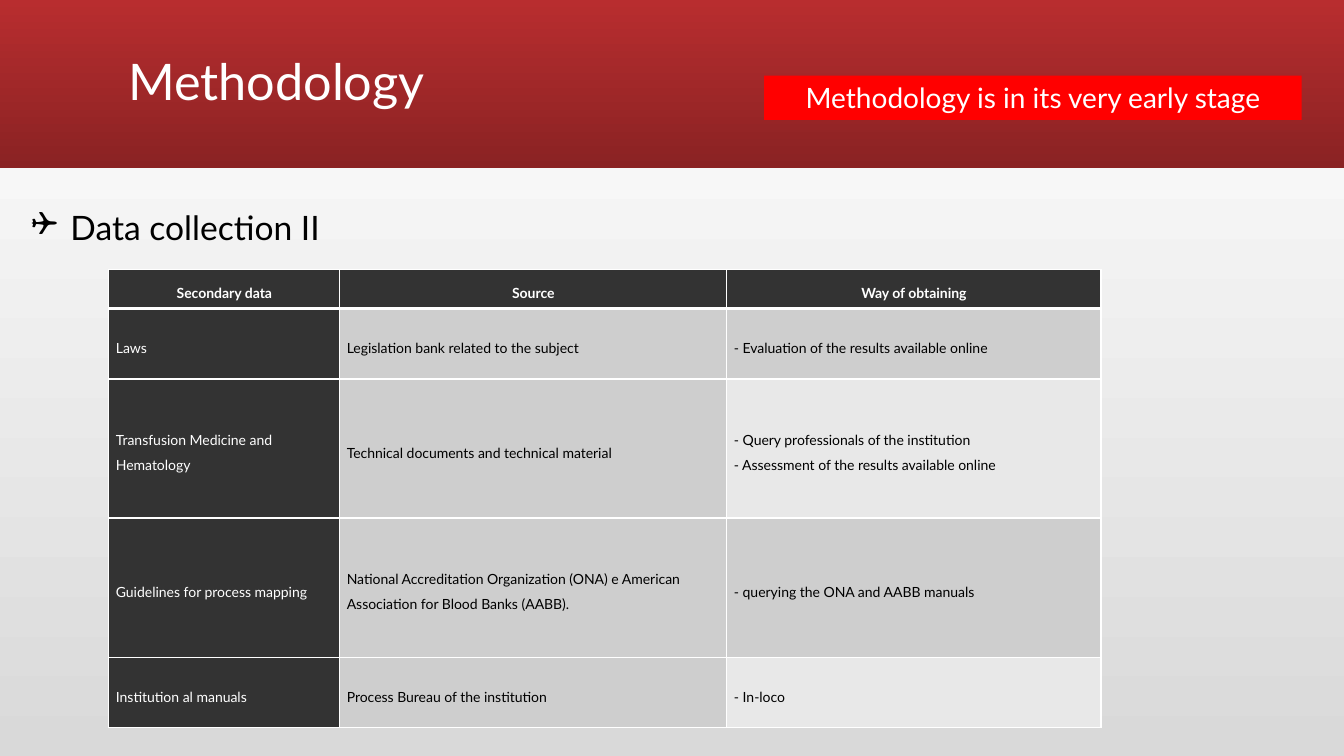
from lxml import etree
from pptx import Presentation
from pptx.dml.color import RGBColor
from pptx.enum.shapes import MSO_SHAPE
from pptx.enum.text import MSO_ANCHOR, MSO_AUTO_SIZE, PP_ALIGN
from pptx.oxml.ns import qn
from pptx.util import Inches, Pt

RECTANGLE = MSO_SHAPE.RECTANGLE
MIDDLE = MSO_ANCHOR.MIDDLE
LEFT, CENTER = PP_ALIGN.LEFT, PP_ALIGN.CENTER
NO_FIT = MSO_AUTO_SIZE.NONE
TITLE_ONLY = 5

FONT = "Lato"
COLORS = {
    "white": "FFFFFF", "black": "000000", "alert": "FF0000",
    "banner_top": "B82D2F", "banner_bottom": "8A2223",
    "page_bottom": "D9D9D9", "page_top": "FFFFFF",
    "dark": "333333", "band": "CECECE", "light_band": "E8E8E8",
}

COLUMN_WIDTHS = [2.29, 3.84, 3.71]
ROW_HEIGHTS = [0.39, 0.7, 1.38, 1.38, 0.7]
ROWS = [
    ["Secondary data", "Source", "Way of obtaining"],
    ["Laws", "Legislation bank related to the subject",
     "- Evaluation of the results available online"],
    ["Transfusion Medicine and Hematology",
     "Technical documents and technical material",
     "- Query professionals of the institution\n"
     "- Assessment of the results available online"],
    ["Guidelines for process mapping",
     "National Accreditation Organization (ONA) e American "
     "Association for Blood Banks (AABB).",
     "- querying the ONA and AABB manuals"],
    ["Institution al manuals", "Process Bureau of the institution",
     "- In-loco"],
]


def color(name):
    return RGBColor.from_string(COLORS[name])


def set_all(target, values):
    for name, value in values.items():
        setattr(target, name, value)


def place(shape, left, top, width, height):
    set_all(shape, {"left": Inches(left), "top": Inches(top),
                    "width": Inches(width), "height": Inches(height)})


def write(frame, text, size, color_name, bold=False, **para_format):
    """Fill a text frame, one paragraph for each line of text."""
    frame.text = text
    for para in frame.paragraphs:
        set_all(para, para_format)
        for span in para.runs:
            set_all(span.font, {"name": FONT, "size": Pt(size), "bold": bold})
            span.font.color.rgb = color(color_name)


def fill_gradient(fill, angle, start, end):
    fill.gradient()
    fill.gradient_angle = angle
    for stop, position, name in zip(fill.gradient_stops, (0, 1), (start, end)):
        stop.position = position
        stop.color.rgb = color(name)


def add_rectangle(page, *bounds):
    box = page.shapes.add_shape(RECTANGLE, *map(Inches, bounds))
    box.shadow.inherit = False
    box.line.fill.background()
    return box


def add_title(page, text):
    title = page.shapes.title
    place(title, 1.17, 0.11, 11, 1.45)
    set_all(title.text_frame, {"vertical_anchor": MIDDLE, "word_wrap": True,
                               "auto_size": NO_FIT})
    write(title.text_frame, text, 36, "white", alignment=LEFT,
          line_spacing=0.9)
    return title


def add_bullet_heading(page, text):
    box = page.shapes.add_textbox(*map(Inches, (0.21, 2, 3.31, 0.5)))
    box.text_frame.word_wrap = True
    write(box.text_frame, text, 24, "black")
    indent = Inches(0.39)
    properties = box.text_frame.paragraphs[0]._p.get_or_add_pPr()
    properties.set("marL", str(indent))
    properties.set("indent", str(-indent))
    etree.SubElement(properties, qn("a:buFont"), typeface="Wingdings")
    etree.SubElement(properties, qn("a:buChar"), char="❑")


def set_borders(cell, widths):
    """Draw white left, right, top and bottom borders."""
    properties = cell._tc.get_or_add_tcPr()
    for index, (side, width) in enumerate(zip("LRTB", widths)):
        line = etree.Element(qn(f"a:ln{side}"), w=str(Pt(width)))
        fill = etree.SubElement(line, qn("a:solidFill"))
        etree.SubElement(fill, qn("a:srgbClr"), val=COLORS["white"])
        properties.insert(index, line)


def cell_fill(row, column):
    if row == 0 or column == 0:
        return "dark"
    return "light_band" if column == 2 and row % 2 == 0 else "band"


def add_data_table(page):
    bounds = (1.08, 2.67, sum(COLUMN_WIDTHS), sum(ROW_HEIGHTS))
    table = page.shapes.add_table(len(ROWS), len(COLUMN_WIDTHS),
                                  *map(Inches, bounds)).table
    for column, width in zip(table.columns, COLUMN_WIDTHS):
        column.width = Inches(width)
    for r, (row, height) in enumerate(zip(table.rows, ROW_HEIGHTS)):
        row.height = Inches(height)
        for c, cell in enumerate(row.cells):
            set_all(cell, {"vertical_anchor": MIDDLE,
                           "margin_left": Inches(0.07),
                           "margin_right": Inches(0.07),
                           "margin_top": 0, "margin_bottom": 0})
            fill_name = cell_fill(r, c)
            cell.fill.solid()
            cell.fill.fore_color.rgb = color(fill_name)
            set_borders(cell, (1, 1, 3 if r == 1 else 1, 3 if r == 0 else 1))
            write(cell.text_frame, ROWS[r][c], 10,
                  "white" if fill_name == "dark" else "black", bold=r == 0,
                  alignment=CENTER if r == 0 else LEFT, line_spacing=1.5)


def add_notice(page, text):
    box = add_rectangle(page, 7.58, 0.75, 5.33, 0.44)
    box.fill.solid()
    box.fill.fore_color.rgb = color("alert")
    set_all(box.text_frame, {"word_wrap": True, "vertical_anchor": MIDDLE})
    write(box.text_frame, text, 20, "white", alignment=CENTER)


def main():
    deck = Presentation()
    set_all(deck, {"slide_width": Inches(13.33), "slide_height": Inches(7.5)})
    page = deck.slides.add_slide(deck.slide_layouts[TITLE_ONLY])
    fill_gradient(page.background.fill, 90, "page_bottom", "page_top")

    # Header: the banner goes behind the title
    title = add_title(page, "Methodology")
    banner = add_rectangle(page, 0, 0, 13.33, 1.67)
    fill_gradient(banner.fill, 270, "banner_top", "banner_bottom")
    title.element.addprevious(banner.element)

    # Body
    add_data_table(page)
    add_bullet_heading(page, "Data collection II")
    add_notice(page, "Methodology is in its very early stage")

    deck.save("out.pptx")


if __name__ == "__main__":
    main()
